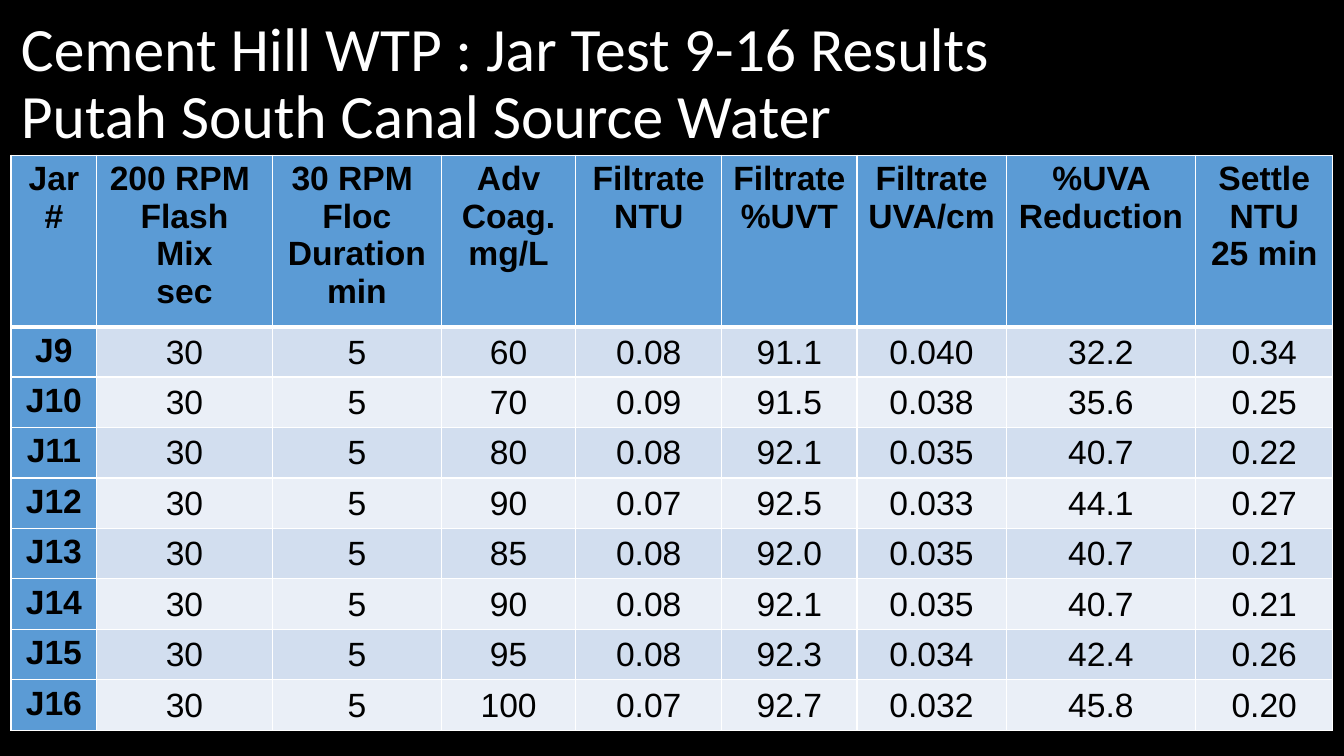
from lxml.etree import SubElement
from pptx import Presentation
from pptx.dml.color import RGBColor as Color
from pptx.enum.text import MSO_ANCHOR as Anchor, PP_ALIGN as Align
from pptx.oxml.ns import qn
from pptx.util import Inches, Pt

COLORS = {
    "background": "000000",
    "title": "FFFFFF",
    "text": "000000",
    "border": "FFFFFF",
    "header": "5B9BD5",
    "odd": "D2DEEF",
    "even": "EAEFF7",
}
TITLE = "Cement Hill WTP : Jar Test 9-16 Results\vPutah South Canal Source Water"
HEADERS = [
    "Jar\n#",
    "200 RPM \nFlash\nMix\nsec",
    "30 RPM \nFloc\nDuration\nmin",
    "Adv\nCoag.\nmg/L",
    "Filtrate\nNTU",
    "Filtrate\n%UVT",
    "Filtrate\nUVA/cm",
    "%UVA Reduction",
    "Settle\nNTU\n25 min",
]
FLASH_MIX, FLOC_DURATION = "30", "5"
JAR_RESULTS = [
    ("60", "0.08", "91.1", "0.040", "32.2", "0.34"),
    ("70", "0.09", "91.5", "0.038", "35.6", "0.25"),
    ("80", "0.08", "92.1", "0.035", "40.7", "0.22"),
    ("90", "0.07", "92.5", "0.033", "44.1", "0.27"),
    ("85", "0.08", "92.0", "0.035", "40.7", "0.21"),
    ("90", "0.08", "92.1", "0.035", "40.7", "0.21"),
    ("95", "0.08", "92.3", "0.034", "42.4", "0.26"),
    ("100", "0.07", "92.7", "0.032", "45.8", "0.20"),
]
FIRST_JAR = 9
COLUMN_WIDTHS = [0.85, 1.74, 1.68, 1.33, 1.45, 1.34, 1.48, 1.88, 1.36]
HEADER_HEIGHT, ROW_HEIGHT = 1.04, 0.44
LABEL_CELL = {
    "vertical_anchor": Anchor.TOP,
    "margin_left": Inches(0.1),
    "margin_right": Inches(0.1),
    "margin_top": Inches(0.05),
    "margin_bottom": Inches(0.05),
}
VALUE_CELL = {
    "vertical_anchor": Anchor.MIDDLE,
    "margin_left": Inches(0.01),
    "margin_right": Inches(0.01),
    "margin_top": Inches(0.01),
    "margin_bottom": 0,
}


def set_attributes(target, values):
    for name, value in values.items():
        setattr(target, name, value)


class JarTestSlide:
    """Draw the jar test slide's elements in one shared style."""

    def __init__(self, presentation):
        self.slide = presentation.slides.add_slide(presentation.slide_layouts[6])
        fill = self.slide.background.fill
        fill.solid()
        fill.fore_color.rgb = Color.from_string(COLORS["background"])

    def format_text(self, text_frame, color, paragraph_format, font_format):
        for paragraph in text_frame.paragraphs:
            set_attributes(paragraph, paragraph_format)
            for run in paragraph.runs:
                set_attributes(run.font, font_format)
                run.font.color.rgb = Color.from_string(COLORS[color])

    def add_title(self, text, left, top, width, height):
        box = self.slide.shapes.add_textbox(
            Inches(left), Inches(top), Inches(width), Inches(height)
        )
        frame = box.text_frame
        set_attributes(frame, {"word_wrap": True, "vertical_anchor": Anchor.MIDDLE})
        frame.text = text
        self.format_text(
            frame, "title", {"line_spacing": 0.9}, {"name": "Calibri", "size": Pt(44)}
        )

    def add_borders(self, cell, widths):
        properties = cell._tc.get_or_add_tcPr()
        for side, width in widths.items():
            line = SubElement(properties, qn(f"a:ln{side}"), w=str(Pt(width)))
            fill = SubElement(line, qn("a:solidFill"))
            SubElement(fill, qn("a:srgbClr"), val=COLORS["border"])

    def fill_cell(self, cell, text, row, column):
        is_label = row == 0 or column == 0
        self.add_borders(
            cell,
            {"L": 1, "R": 1, "T": 3 if row == 1 else 1, "B": 3 if row == 0 else 1},
        )
        band = "odd" if row % 2 else "even"
        cell.fill.solid()
        cell.fill.fore_color.rgb = Color.from_string(
            COLORS["header" if is_label else band]
        )
        set_attributes(cell, LABEL_CELL if is_label else VALUE_CELL)
        cell.text_frame.text = text
        self.format_text(
            cell.text_frame,
            "text",
            {"alignment": Align.CENTER},
            {"name": "Arial", "size": Pt(24), "bold": is_label},
        )

    def add_table(self, rows, left, top):
        height = HEADER_HEIGHT + ROW_HEIGHT * (len(rows) - 1)
        table = self.slide.shapes.add_table(
            len(rows),
            len(COLUMN_WIDTHS),
            Inches(left),
            Inches(top),
            Inches(sum(COLUMN_WIDTHS)),
            Inches(height),
        ).table
        set_attributes(table, {"first_col": True})
        for column, width in zip(table.columns, COLUMN_WIDTHS):
            column.width = Inches(width)
        for row_index, texts in enumerate(rows):
            table.rows[row_index].height = Inches(
                ROW_HEIGHT if row_index else HEADER_HEIGHT
            )
            for column_index, text in enumerate(texts):
                cell = table.cell(row_index, column_index)
                self.fill_cell(cell, text, row_index, column_index)


def main():
    presentation = Presentation()
    set_attributes(
        presentation, {"slide_width": Inches(13.33), "slide_height": Inches(7.5)}
    )
    jar_slide = JarTestSlide(presentation)
    jar_slide.add_title(TITLE, 0.11, 0.12, 12.3, 1.45)
    jar_rows = [
        [f"J{number}", FLASH_MIX, FLOC_DURATION, *results]
        for number, results in enumerate(JAR_RESULTS, FIRST_JAR)
    ]
    jar_slide.add_table([HEADERS, *jar_rows], 0.11, 1.54)
    presentation.save("out.pptx")


if __name__ == "__main__":
    main()
